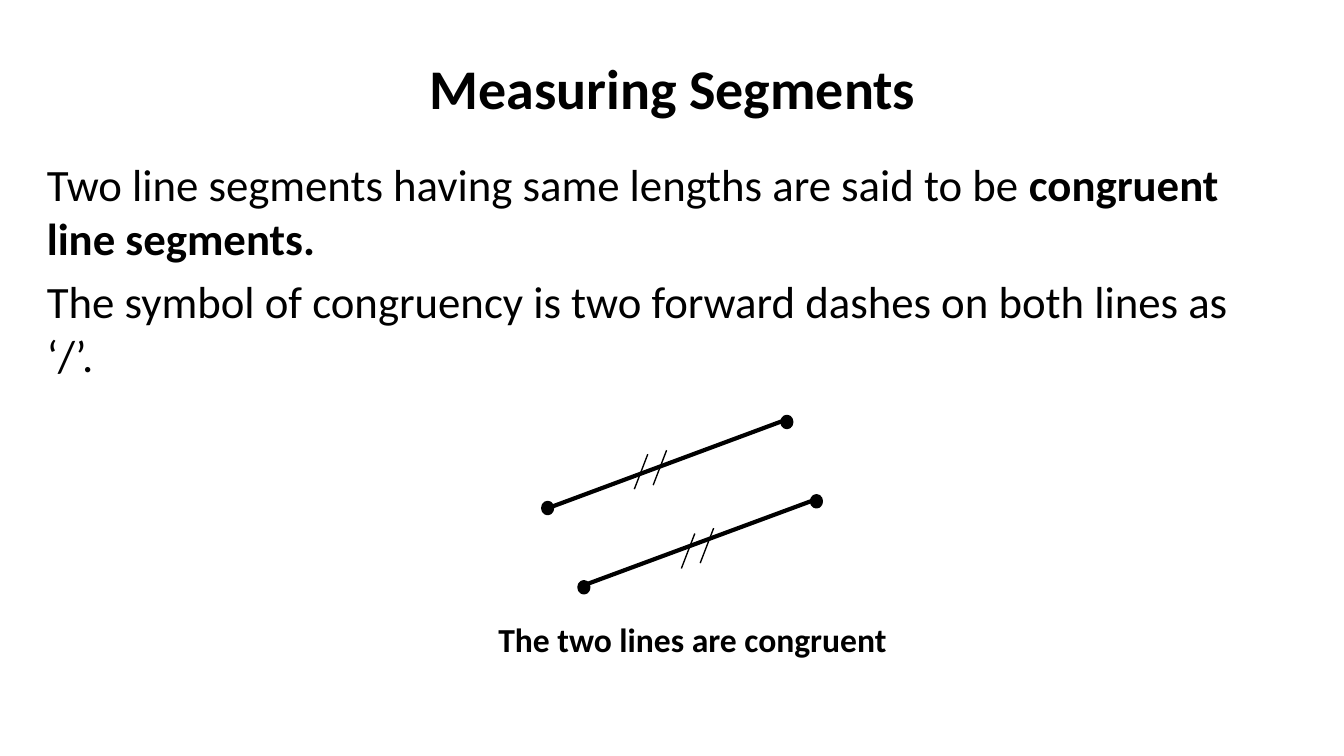
"""Build a slide on congruent line segments."""
import pptx
import pptx.util
import pptx.dml.color
import pptx.enum.shapes
import pptx.enum.text
import lxml.etree
from pptx.util import Inches

BLACK = "000000"
ALIGN = pptx.enum.text.PP_ALIGN
ANCHOR = pptx.enum.text.MSO_ANCHOR


def color(value):
    return pptx.dml.color.RGBColor.from_string(value)


def add_text(paragraphs, left, top, width, height, size, align=ALIGN.LEFT,
             anchor=ANCHOR.TOP, before=0):
    box = page.shapes.add_textbox(Inches(left), Inches(top), Inches(width), Inches(height))
    frame = box.text_frame
    frame.word_wrap = True
    frame.vertical_anchor = anchor
    for index, spans in enumerate(paragraphs):
        para = frame.add_paragraph() if index else frame.paragraphs[0]
        para.alignment = align
        para.space_before = pptx.util.Pt(before)
        for text, bold in spans:
            span = para.add_run()
            span.text = text
            span.font.name = "Calibri"
            span.font.size = pptx.util.Pt(size)
            span.font.bold = bold
            span.font.color.rgb = color(BLACK)


deck = pptx.Presentation()
deck.slide_width = Inches(10)
deck.slide_height = deck.slide_width * 9 // 16
page = deck.slides.add_slide(deck.slide_layouts[6])

add_text([[("Measuring Segments", True)]], 1.38, 0.12, 7.25, 1.06, size=30,
         align=ALIGN.CENTER, anchor=ANCHOR.MIDDLE)
add_text([
    [("Two line segments having same lengths are said to be ", False),
     ("congruent line segments.", True)],
    [("The symbol of congruency is two forward dashes on both lines as ‘/’.", False)],
], 0.25, 1.12, 9.25, 4.48, size=24, before=4.8)

segments = [(4.08, 3.78, 5.83, 3.13), (4.33, 4.36, 6.06, 3.72)]
dash_tops = [(4.96, 3.35), (4.82, 3.38), (5.31, 3.93), (5.17, 3.97)]
dashes = [(x, y, x - 0.1, y + 0.26) for x, y in dash_tops]
strokes = [(ends, 2.25) for ends in segments] + [(ends, 0.75) for ends in dashes]
for ends, weight in strokes:
    line = page.shapes.add_connector(
        pptx.enum.shapes.MSO_CONNECTOR.STRAIGHT, *[Inches(value) for value in ends])
    line.line.color.rgb = color(BLACK)
    line.line.width = pptx.util.Pt(weight)
    lxml.etree.SubElement(line._element.spPr, pptx.oxml.ns.qn("a:effectLst"))

for left, top in [(4.04, 3.74), (5.82, 3.1), (6.04, 3.69), (4.31, 4.33)]:
    endpoint = page.shapes.add_shape(
        pptx.enum.shapes.MSO_SHAPE.OVAL, Inches(left), Inches(top), Inches(0.07), Inches(0.08))
    endpoint.shadow.inherit = False
    endpoint.fill.solid()
    endpoint.fill.fore_color.rgb = color(BLACK)
    endpoint.line.color.rgb = color(BLACK)
    endpoint.line.width = pptx.util.Pt(2)

add_text([[("The two lines are congruent", True)]], 3.61, 4.56, 3.39, 0.4, size=18)

deck.save("out.pptx")
